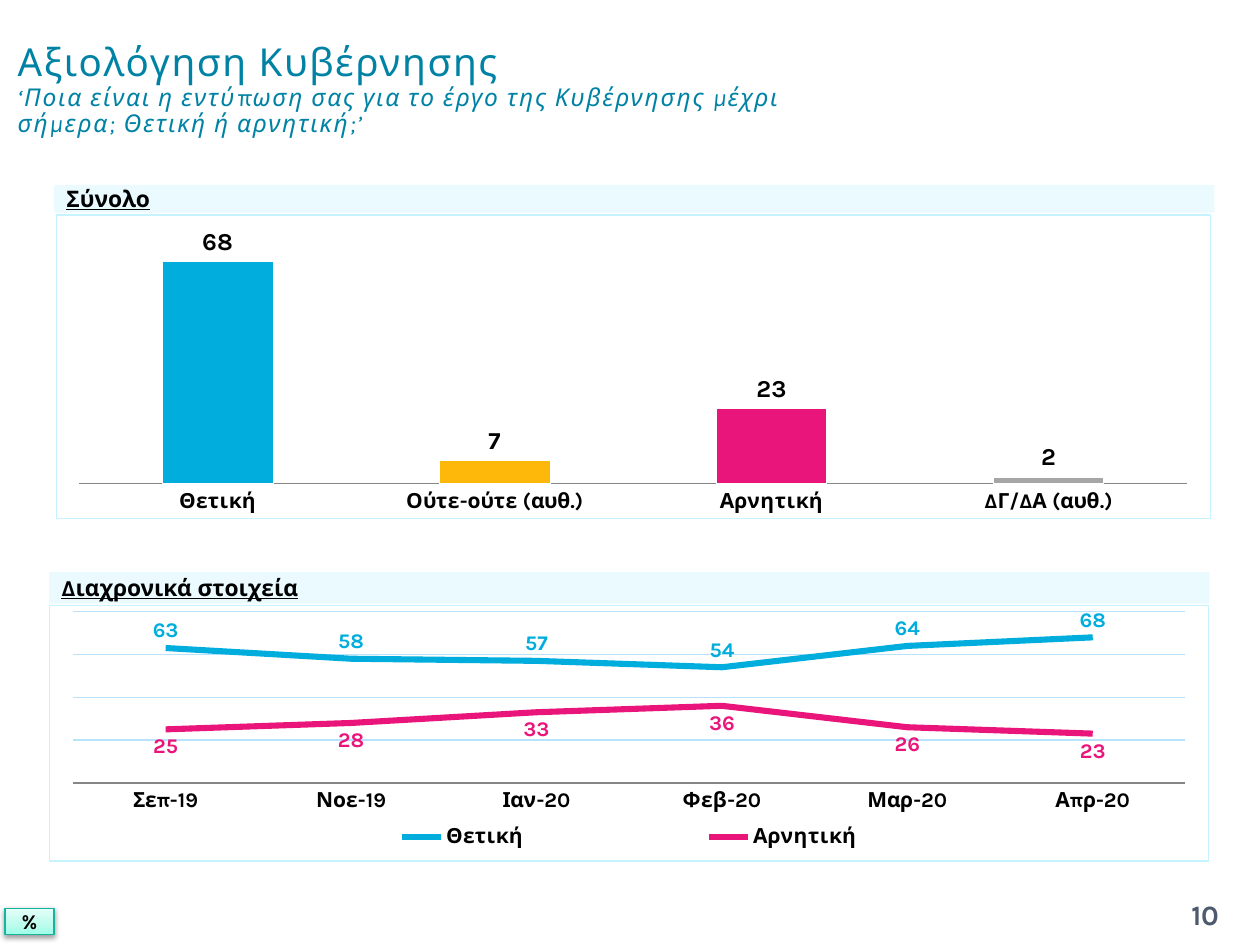
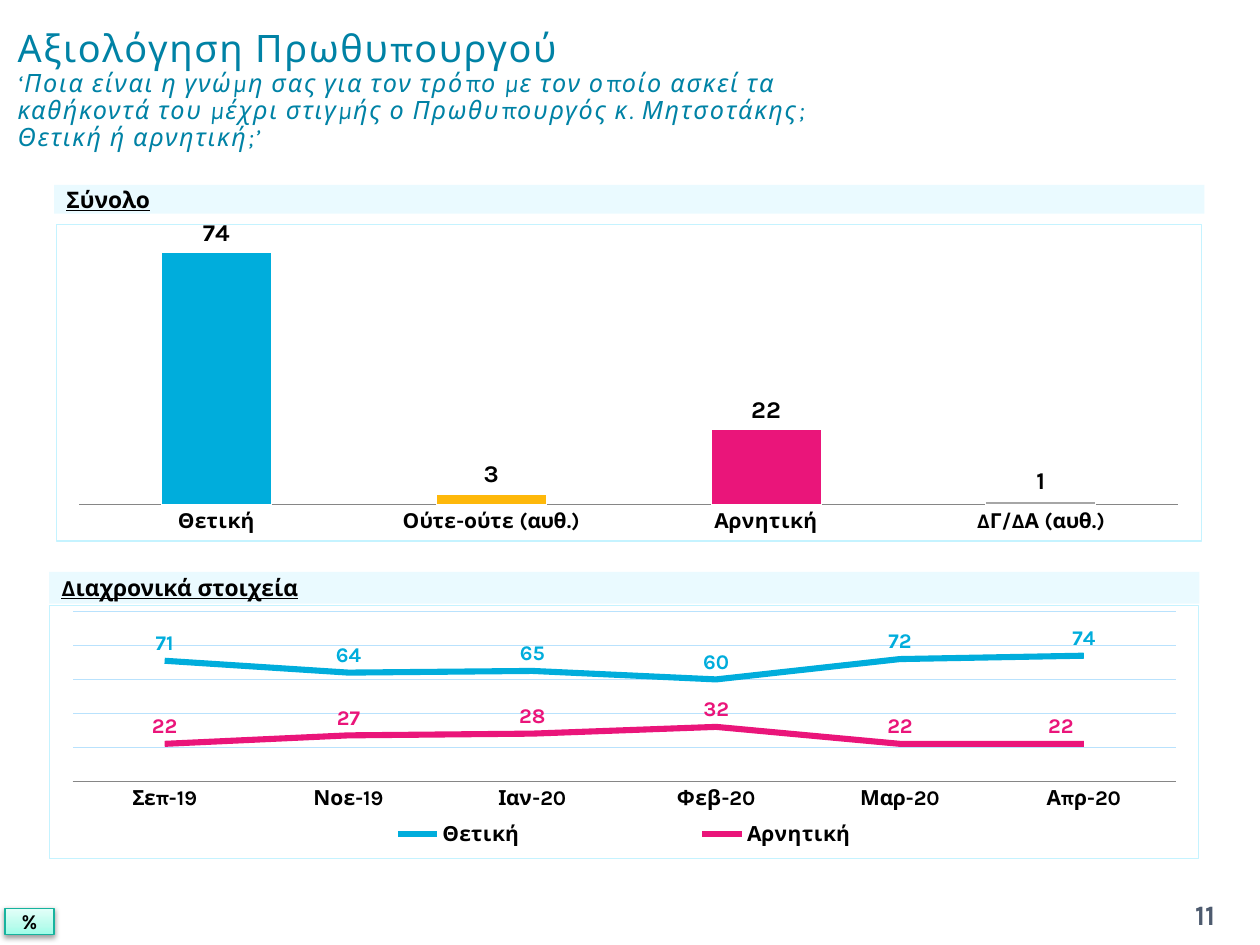
import copy

import pptx
import pptx.chart.data
import pptx.dml.color
import pptx.enum.chart
import pptx.enum.shapes
import pptx.enum.text
import pptx.oxml
import pptx.oxml.ns
import pptx.util
from lxml import etree
from pptx.util import Cm, Pt

FONT = "Karla"
COLORS = {
    "title": "0082A5", "text": "000000", "number": "4E5B6F", "white": "FFFFFF",
    "band": "C5F3FF", "grid": "B9E2FD", "axis": "868686",
    "positive": "00ADDC", "neutral": "FEB80A", "negative": "EA157A", "unknown": "A6A6A6",
    "badge_line": "16B39E",
}
BADGE_STOPS = [(0, "9DFDE8"), (0.35, "BBFCED"), (1, "E4FFF9")]
ANSWERS = {"Θετική": "positive", "Ούτε-ούτε (αυθ.)": "neutral",
           "Αρνητική": "negative", "ΔΓ/ΔΑ (αυθ.)": "unknown"}
MONTHS = ["Σεπ-19", "Νοε-19", "Ιαν-20", "Φεβ-20", "Μαρ-20", "Απρ-20"]
BAND_LEFT, TREND_LEFT = 1.09, 0.99
ABOVE = pptx.enum.chart.XL_LABEL_POSITION.ABOVE
BELOW = pptx.enum.chart.XL_LABEL_POSITION.BELOW

PAGES = [
    {
        "number": "10", "title": "Αξιολόγηση Κυβέρνησης", "sizes": (22, 14),
        "question": "‘Ποια είναι η εντύπωση σας για το έργο της Κυβέρνησης μέχρι "
                    "σήμερα; Θετική ή αρνητική;’",
        "band_width": 23.39, "band_height": 0.56,
        "total_frame": (4.32, 23.29, 6.15), "total": [68, 7, 23, 2],
        "trend_height": 5.18, "trend_max": 80, "negative_position": BELOW,
        "positive": [63, 58, 57, 54, 64, 68], "negative": [25, 28, 33, 36, 26, 23],
    },
    {
        "number": "11", "title": "Αξιολόγηση Πρωθυπουργού", "sizes": (21.6, 14.4),
        "question": "‘Ποια είναι η γνώμη σας για τον τρόπο με τον οποίο ασκεί τα "
                    "καθήκοντά του μέχρι στιγμής ο Πρωθυπουργός κ. Μητσοτάκης; "
                    "Θετική ή αρνητική;’",
        "band_width": 23.19, "band_height": 0.58,
        "total_frame": (4.42, 23.11, 6.5), "total": [74, 3, 22, 1],
        "trend_height": 5.13, "trend_max": 100, "negative_position": ABOVE,
        "positive": [71, 64, 65, 60, 72, 74], "negative": [22, 27, 28, 32, 22, 22],
        "last_label_shift": -0.02,
    },
]


def color(name):
    return pptx.dml.color.RGBColor.from_string(COLORS[name])


def qn(tag):
    return pptx.oxml.ns.qn(tag)


def style(font, size, color_name="text", bold=True):
    font.name = FONT
    font.size = Pt(size)
    font.bold = bold
    font.color.rgb = color(color_name)


def add_title(page, content):
    title = page.shapes.title
    title.left, title.top, title.width, title.height = Cm(0.1), Cm(0.33), Cm(17.4), Cm(3)
    frame = title.text_frame
    frame.word_wrap = True
    frame.auto_size = pptx.enum.text.MSO_AUTO_SIZE.NONE
    frame.vertical_anchor = pptx.enum.text.MSO_ANCHOR.MIDDLE
    para = frame.paragraphs[0]
    para.text = content["title"] + "\v" + content["question"]
    para.alignment = pptx.enum.text.PP_ALIGN.LEFT
    para.line_spacing = 0.9
    for span, size in zip(para.runs, content["sizes"]):
        style(span.font, size, "title", False)
        span.font._element.set("spc", "100")
    para.runs[1].font.italic = True


def add_rectangle(page, left, top, width, height):
    box = page.shapes.add_shape(pptx.enum.shapes.MSO_SHAPE.RECTANGLE,
                                Cm(left), Cm(top), Cm(width), Cm(height))
    box.shadow.inherit = False
    box.text_frame.vertical_anchor = pptx.enum.text.MSO_ANCHOR.MIDDLE
    return box


def add_band(page, text, left, top, width, height, underline_end=None):
    """Pale heading band; a trailing tab carries the underline to underline_end."""
    box = add_rectangle(page, left, top, width, height)
    box.fill.solid()
    box.fill.fore_color.rgb = color("band")
    tint = box._element.spPr.find(qn("a:solidFill")).find(qn("a:srgbClr"))
    etree.SubElement(tint, qn("a:alpha"), val="35000")
    box.line.fill.background()
    para = box.text_frame.paragraphs[0]
    para.text = text + ("\t" if underline_end else "")
    para.alignment = pptx.enum.text.PP_ALIGN.LEFT
    if underline_end:
        stops = etree.SubElement(para._p.get_or_add_pPr(), qn("a:tabLst"))
        etree.SubElement(stops, qn("a:tab"), pos=str(Cm(underline_end)), algn="l")
    style(para.runs[0].font, 13)
    para.runs[0].font.underline = True


def add_percent_badge(page):
    box = add_rectangle(page, 0.1, 18.31, 0.99, 0.53)
    box.fill.gradient()
    box.fill.gradient_angle = 90
    stop_list = box._element.spPr.find(qn("a:gradFill")).find(qn("a:gsLst"))
    stop_list.append(copy.deepcopy(stop_list[-1]))
    for stop, (position, shade) in zip(box.fill.gradient_stops, BADGE_STOPS):
        stop.position = position
        stop.color.rgb = pptx.dml.color.RGBColor.from_string(shade)
    box.line.color.rgb = color("badge_line")
    box.line.width = Pt(0.75)
    shadow = etree.SubElement(box._element.spPr.find(qn("a:effectLst")), qn("a:outerShdw"),
                              blurRad=str(Pt(3.1)), dist=str(Pt(1.6)), dir="5400000",
                              rotWithShape="0")
    shade = etree.SubElement(shadow, qn("a:srgbClr"), val=COLORS["text"])
    etree.SubElement(shade, qn("a:alpha"), val="38000")
    write_centred(box.text_frame, "%", 12, "text")


def write_centred(frame, text, size, color_name):
    frame.vertical_anchor = pptx.enum.text.MSO_ANCHOR.MIDDLE
    para = frame.paragraphs[0]
    para.text = text
    para.alignment = pptx.enum.text.PP_ALIGN.CENTER
    style(para.runs[0].font, size, color_name)


def add_page_number(page, number):
    box = page.shapes.add_textbox(Cm(23.29), Cm(17.93), Cm(2.01), Cm(1.02))
    box.text_frame.word_wrap = True
    write_centred(box.text_frame, number, 16, "number")


def make_layout(x, y, width=None, height=None, inner=False):
    """Manual chart layout, in fractions of the chart."""
    layout = etree.Element(qn("c:layout"))
    manual = etree.SubElement(layout, qn("c:manualLayout"))
    if inner:
        etree.SubElement(manual, qn("c:layoutTarget"), val="inner")
    if width:
        for tag in ("c:xMode", "c:yMode"):
            etree.SubElement(manual, qn(tag), val="edge")
    for tag, value in (("c:x", x), ("c:y", y), ("c:w", width), ("c:h", height)):
        if value is not None:
            etree.SubElement(manual, qn(tag), val=str(value))
    return layout


def add_chart(page, kind, data, frame, plot_height, maximum):
    """Framed chart with a hidden value axis starting at zero."""
    chart = page.shapes.add_chart(kind, *[Cm(length) for length in frame], data).chart
    style(chart.font, 18, bold=False)
    chart.has_title = False
    chart.has_legend = False
    space = chart._chartSpace
    border = pptx.oxml.parse_xml(
        f'<c:spPr {pptx.oxml.ns.nsdecls("c", "a")}><a:noFill/><a:ln w="{Pt(0.75)}">'
        f'<a:solidFill><a:srgbClr val="{COLORS["band"]}"/></a:solidFill></a:ln></c:spPr>')
    space.find(qn("c:txPr")).addprevious(border)
    area = space.find(qn("c:chart")).find(qn("c:plotArea"))
    for old in area.findall(qn("c:layout")):
        area.remove(old)
    area.insert(0, make_layout(0.02, 0.025, 0.96, plot_height, inner=True))
    values = chart.value_axis
    values.visible = False
    values.minimum_scale, values.maximum_scale, values.major_unit = 0, maximum, 20
    values.has_major_gridlines = False
    categories = chart.category_axis
    categories.major_tick_mark = pptx.enum.chart.XL_TICK_MARK.NONE
    categories.format.line.color.rgb = color("axis")
    style(categories.tick_labels.font, 12)
    return chart


def show_values(labels, position, size, color_name):
    labels.show_value = True
    labels.position = position
    labels.number_format = "0"
    labels.number_format_is_linked = False
    style(labels.font, size, color_name)


def add_total_chart(page, content):
    data = pptx.chart.data.CategoryChartData()
    data.categories = list(ANSWERS)
    data.add_series("Series 1", content["total"])
    top, width, height = content["total_frame"]
    chart = add_chart(page, pptx.enum.chart.XL_CHART_TYPE.COLUMN_CLUSTERED, data,
                      (1.12, top, width, height), 0.86, 80)
    plot = chart.plots[0]
    plot.gap_width, plot.overlap, plot.vary_by_categories = 150, -25, False
    bars = plot.series[0]
    for index, color_name in enumerate(ANSWERS.values()):
        look = bars.points[index].format
        look.fill.solid()
        look.fill.fore_color.rgb = color(color_name)
        look.line.color.rgb = color("white")
    show_values(bars.data_labels, pptx.enum.chart.XL_LABEL_POSITION.OUTSIDE_END, 14, "text")


def add_trend_chart(page, content):
    data = pptx.chart.data.CategoryChartData()
    data.categories = MONTHS
    data.add_series("Θετική", content["positive"])
    data.add_series("Αρνητική", content["negative"])
    chart = add_chart(page, pptx.enum.chart.XL_CHART_TYPE.LINE, data,
                      (TREND_LEFT, 12.19, content["band_width"], content["trend_height"]),
                      0.67, content["trend_max"])
    chart.value_axis.has_major_gridlines = True
    grid = chart.value_axis.major_gridlines.format.line
    grid.color.rgb = color("grid")
    grid.width = Pt(0.75)
    chart.plots[0].vary_by_categories = False
    positions = (ABOVE, content["negative_position"])
    for line, name, position in zip(chart.plots[0].series, ("positive", "negative"), positions):
        line.smooth = False
        line.marker.style = pptx.enum.chart.XL_MARKER_STYLE.NONE
        line.format.line.color.rgb = color(name)
        line.format.line.width = Pt(3.5)
        show_values(line.data_labels, position, 12, name)
    if "last_label_shift" in content:
        label = line.points[len(MONTHS) - 1].data_label
        style(label.font, 12, "negative")
        label.position = ABOVE
        node = line.data_labels._element.find(qn("c:dLbl"))
        node.insert(1, make_layout(content["last_label_shift"], 0))
    chart.has_legend = True
    legend = chart.legend
    legend.position = pptx.enum.chart.XL_LEGEND_POSITION.BOTTOM
    legend.include_in_layout = False
    style(legend.font, 12)
    for old in legend._element.findall(qn("c:layout")):
        legend._element.remove(old)
    legend._element.find(qn("c:legendPos")).addnext(make_layout(0.15, 0.84, 0.7, 0.13))


def main():
    deck = pptx.Presentation()
    deck.slide_width, deck.slide_height = Cm(25.4), Cm(19.05)
    for content in PAGES:
        page = deck.slides.add_slide(deck.slide_layouts[5])
        width = content["band_width"]
        add_title(page, content)
        add_band(page, "Σύνολο", BAND_LEFT, 3.73, width, content["band_height"], 2.9)
        add_total_chart(page, content)
        add_percent_badge(page)
        add_page_number(page, content["number"])
        add_band(page, "Διαχρονικά στοιχεία", TREND_LEFT, 11.53, width, 0.64)
        add_trend_chart(page, content)
    deck.save("out.pptx")


if __name__ == "__main__":
    main()
